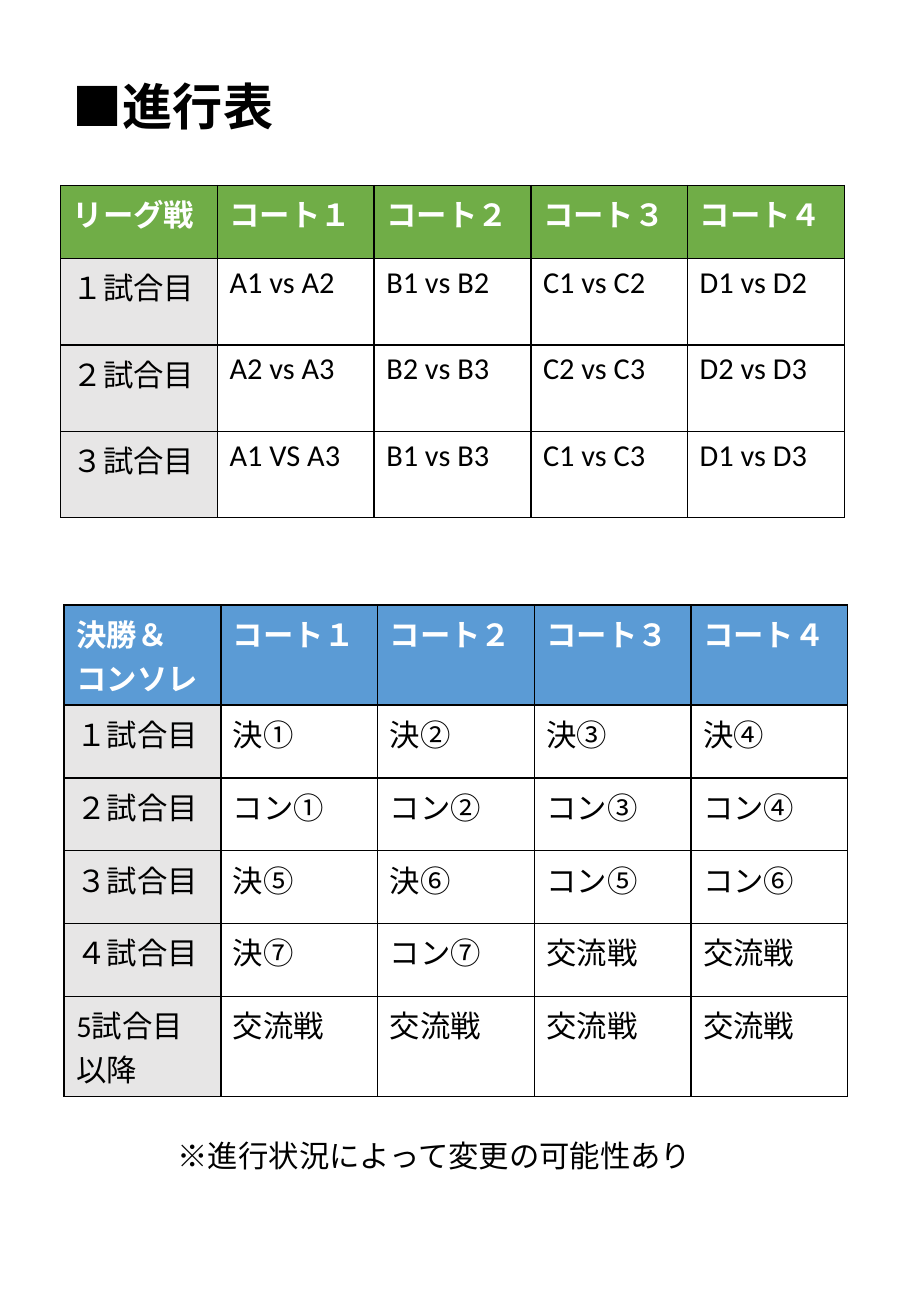
from lxml import etree
from pptx import Presentation
from pptx.dml.color import RGBColor
from pptx.enum.lang import MSO_LANGUAGE_ID
from pptx.enum.text import MSO_ANCHOR, PP_ALIGN
from pptx.oxml.ns import qn
from pptx.util import Pt

MIDDLE = MSO_ANCHOR.MIDDLE
LEFT, CENTER = PP_ALIGN.LEFT, PP_ALIGN.CENTER
JAPANESE = MSO_LANGUAGE_ID.JAPANESE

LATIN, CJK = "Calibri", "Noto Sans CJK JP"
COLORS = {
    "black": "000000",
    "white": "FFFFFF",
    "green": "70AD47",
    "blue": "5B9BD5",
    "gray": "E7E6E6",
}
COL_W, ROW_H, ROW_GAP_H, TWO_LINE_H = 92.9, 43.2, 51.25, 59.25

COURTS = ["コート１", "コート２", "コート３", "コート４"]
LEAGUE = [
    ["リーグ戦", *COURTS],
    ["１試合目", "A1 vs A2", "B1 vs B2", "C1 vs C2", "D1 vs D2"],
    ["２試合目", "A2 vs A3", "B2 vs B3", "C2 vs C3", "D2 vs D3"],
    ["３試合目", "A1 VS A3", "B1 vs B3", "C1 vs C3", "D1 vs D3"],
]
FINALS = [
    ["決勝＆\nコンソレ", *COURTS],
    ["１試合目", "決①", "決②", "決③", "決④"],
    ["２試合目", "コン①", "コン②", "コン③", "コン④"],
    ["３試合目", "決⑤", "決⑥", "コン⑤", "コン⑥"],
    ["４試合目", "決⑦", "コン⑦", "交流戦", "交流戦"],
    ["5試合目\n以降"] + ["交流戦"] * 4,
]


def rgb(name):
    return RGBColor.from_string(COLORS[name])


def write(p, text, size=18, color="black", bold=False, font=LATIN):
    """Add text to a paragraph, one run per line."""
    for i, line in enumerate(text.split("\n")):
        if i:
            p.add_line_break()
        r = p.add_run()
        r.text = line
        r.font.name = font
        r.font.size = Pt(size)
        r.font.bold = bold
        r.font.color.rgb = rgb(color)
        r.font.language_id = JAPANESE
        latin = r.font._element.find(qn("a:latin"))
        ea = etree.Element(qn("a:ea"), typeface=CJK)
        latin.addnext(ea)


def add_text(slide, box, text, align=LEFT, anchor=None, **style):
    tf = slide.shapes.add_textbox(*map(Pt, box)).text_frame
    tf.word_wrap = True
    if anchor is not None:
        tf.vertical_anchor = anchor
    p = tf.paragraphs[0]
    p.alignment = align
    write(p, text, **style)


def add_borders(cell):
    tcPr = cell._tc.get_or_add_tcPr()
    for side in ("a:lnL", "a:lnR", "a:lnT", "a:lnB"):
        ln = etree.SubElement(tcPr, qn(side), w=str(Pt(1)))
        fill = etree.SubElement(ln, qn("a:solidFill"))
        etree.SubElement(fill, qn("a:srgbClr"), val=COLORS["black"])


def add_schedule(slide, left, top, rows, heights, header_color):
    """Add a table with a coloured header row and a gray first column."""
    n_cols = len(rows[0])
    table = slide.shapes.add_table(
        len(rows), n_cols, Pt(left), Pt(top),
        Pt(COL_W * n_cols), Pt(sum(heights))).table
    for col in table.columns:
        col.width = Pt(COL_W)
    for i, (texts, height) in enumerate(zip(rows, heights)):
        table.rows[i].height = Pt(height)
        for j, text in enumerate(texts):
            cell = table.cell(i, j)
            add_borders(cell)
            if i == 0 or j == 0:
                cell.fill.solid()
                cell.fill.fore_color.rgb = rgb("gray" if i else header_color)
            else:
                cell.fill.background()
            write(cell.text_frame.paragraphs[0], text,
                  color="black" if i else "white", bold=i == 0)


def main():
    prs = Presentation()
    prs.slide_width, prs.slide_height = Pt(540), Pt(780)
    slide = prs.slides.add_slide(prs.slide_layouts[6])
    add_text(slide, (36, 44.6, 489, 36), "■進行表",
             anchor=MIDDLE, size=29.7, bold=True)
    add_schedule(slide, 36, 110, LEAGUE,
                 [ROW_H] + [ROW_GAP_H] * 3, "green")
    add_schedule(slide, 38, 358.6, FINALS,
                 [TWO_LINE_H] + [ROW_H] * 4 + [TWO_LINE_H], "blue")
    add_text(slide, (13, 670.3, 489, 29), "※進行状況によって変更の可能性あり",
             align=CENTER, font=CJK)
    prs.save("out.pptx")


if __name__ == "__main__":
    main()
